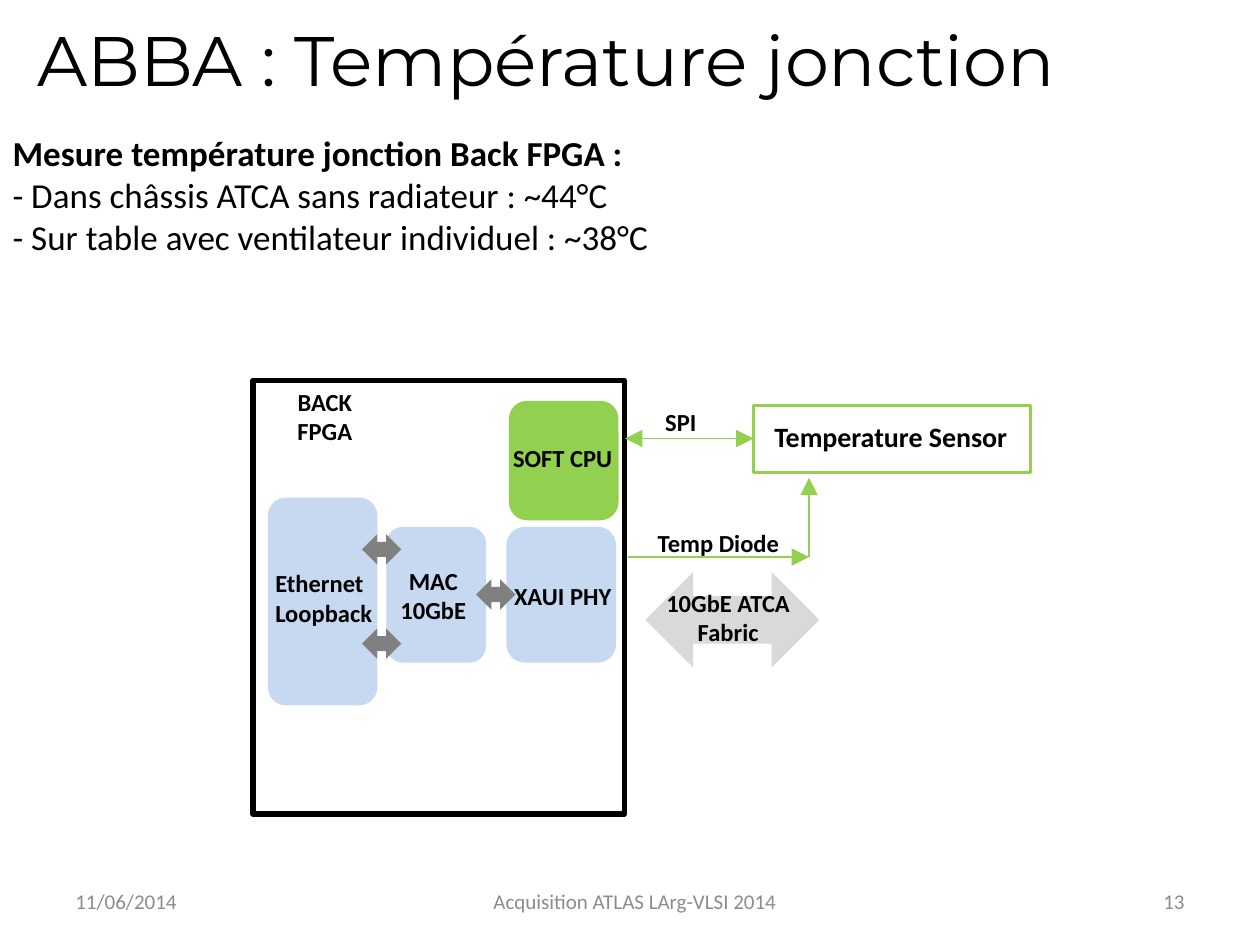
from lxml import etree
from pptx import Presentation
from pptx.dml.color import RGBColor
from pptx.enum.shapes import MSO_CONNECTOR, MSO_SHAPE
from pptx.enum.text import MSO_ANCHOR, MSO_AUTO_SIZE, PP_ALIGN
from pptx.oxml.ns import qn
from pptx.util import Cm, Pt

RECTANGLE = MSO_SHAPE.RECTANGLE
ROUNDED = MSO_SHAPE.ROUNDED_RECTANGLE
DOUBLE_ARROW = MSO_SHAPE.LEFT_RIGHT_ARROW
STRAIGHT = MSO_CONNECTOR.STRAIGHT
LEFT, CENTER, RIGHT = PP_ALIGN.LEFT, PP_ALIGN.CENTER, PP_ALIGN.RIGHT
TOP, MIDDLE = MSO_ANCHOR.TOP, MSO_ANCHOR.MIDDLE
NO_AUTO_SIZE = MSO_AUTO_SIZE.NONE

BLACK, GREY, DARK_GREY, LIGHT_GREY = "000000", "8C8C8C", "808080", "D9D9D9"
BLUE, GREEN = "C6D9F1", "92D050"
LABEL_FONT = {"name": "Calibri", "size": Pt(14), "bold": True}
FOOTER_FONT = {"name": "Calibri", "size": Pt(12), "bold": False}


def color(value):
    return RGBColor.from_string(value)


def place(shape, left, top, width, height):
    values = {"left": left, "top": top, "width": width, "height": height}
    for name, value in values.items():
        setattr(shape, name, Cm(value))


def write_lines(shape, lines, font, text_color=BLACK, align=LEFT, anchor=TOP, wrap=True):
    """Write one paragraph per line, all in the same format."""
    frame = shape.text_frame
    frame.auto_size = NO_AUTO_SIZE
    frame.word_wrap = wrap
    frame.vertical_anchor = anchor
    frame.text = "\n".join(lines)
    for paragraph in frame.paragraphs:
        paragraph.alignment = align
        paragraph.space_before = Pt(0)
        for run in paragraph.runs:
            for name, value in font.items():
                setattr(run.font, name, value)
            run.font.color.rgb = color(text_color)


def add_label(slide, box, lines, font=LABEL_FONT, **options):
    left, top, width, height = box
    text_box = slide.shapes.add_textbox(Cm(left), Cm(top), Cm(width), Cm(height))
    write_lines(text_box, lines, font, **options)


def add_block(slide, kind, box, fill=None, line=None, line_width=1):
    shape = slide.shapes.add_shape(kind, *(Cm(value) for value in box))
    shape.shadow.inherit = False
    if fill:
        shape.fill.solid()
        shape.fill.fore_color.rgb = color(fill)
    else:
        shape.fill.background()
    if line:
        shape.line.color.rgb = color(line)
        shape.line.width = Pt(line_width)
    else:
        shape.line.fill.background()


def add_arrow(slide, start, end, ends=("tailEnd",)):
    connector = slide.shapes.add_connector(STRAIGHT, *(Cm(value) for value in start + end))
    connector.line.color.rgb = color(GREEN)
    connector.line.width = Pt(0.75)
    line = connector.line._get_or_add_ln()
    for name in ends:
        etree.SubElement(line, qn("a:" + name), type="triangle", w="lg", len="lg")
    etree.SubElement(connector._element.spPr, qn("a:effectLst"))


def shifted(origin, box):
    """Move a box or a point from region to slide coordinates."""
    return (origin[0] + box[0], origin[1] + box[1]) + tuple(box[2:])


def fill_header(slide):
    title = slide.shapes.title
    place(title, 0.5, 0.38, 24.3, 1.6)
    write_lines(title, ["ABBA : Température jonction"],
                {"name": "Montserrat", "size": Pt(40)}, anchor=MIDDLE)

    body = slide.placeholders[1]
    place(body, 0, 2.53, 25.4, 2.82)
    write_lines(body, ["Mesure température jonction Back FPGA :",
                       "- Dans châssis ATCA sans radiateur : ~44°C",
                       "- Sur table avec ventilateur individuel : ~38°C"],
                {"name": "Calibri", "size": Pt(20), "bold": False})
    for paragraph in body.text_frame.paragraphs:
        properties = paragraph._p.get_or_add_pPr()
        properties.set("marL", "0")
        properties.set("indent", "0")
        etree.SubElement(properties, qn("a:buNone"))
    body.text_frame.paragraphs[0].runs[0].font.bold = True


def draw_fpga(slide, box):
    origin = box[:2]
    add_block(slide, RECTANGLE, box, line=BLACK, line_width=3)

    # Function blocks
    blocks = [((0.3, 2.36, 2.21, 4.19), BLUE), ((2.69, 2.95, 2.01, 2.74), BLUE),
              ((5.11, 2.95, 2.21, 2.74), BLUE), ((5.16, 0.41, 2.21, 2.41), GREEN)]
    for block, fill in blocks:
        add_block(slide, ROUNDED, shifted(origin, block), fill)

    # Links between blocks
    for left, top in [(2.2, 3.1), (2.2, 5), (4.5, 4.01)]:
        add_block(slide, DOUBLE_ARROW, shifted(origin, (left, top, 0.79, 0.61)), DARK_GREY)

    # Names of the blocks
    labels = [((0, 0, 2.9, 1.45), ["BACK", "FPGA"], CENTER, True),
              ((0.2, 3.66, 2.49, 1.45), ["Ethernet Loopback"], LEFT, True),
              ((2.39, 3.61, 2.49, 1.45), ["MAC 10GbE"], CENTER, True),
              ((5, 1.14, 2.49, 0.86), ["SOFT CPU"], CENTER, False),
              ((5, 3.91, 2.49, 0.86), ["XAUI PHY"], CENTER, False)]
    for label, lines, align, wrap in labels:
        add_label(slide, shifted(origin, label), lines, align=align, wrap=wrap)


def draw_connections(slide, origin):
    # Fabric link
    add_block(slide, DOUBLE_ARROW, shifted(origin, (0.41, 3.86, 3.51, 1.93)), LIGHT_GREY)
    add_label(slide, shifted(origin, (0.48, 4.06, 3.2, 1.45)),
              ["10GbE ATCA", "Fabric"], align=CENTER)

    # Temperature sensor
    add_block(slide, RECTANGLE, shifted(origin, (2.59, 0.51, 5.59, 1.35)),
              line=GREEN, line_width=2)
    add_label(slide, shifted(origin, (2.21, 0.66, 6.3, 0.94)), ["Temperature Sensor"],
              {**LABEL_FONT, "size": Pt(16)}, align=CENTER)

    # Sensor lines
    corner = shifted(origin, (3.71, 3.56))
    add_arrow(slide, shifted(origin, (0, 1.17)), shifted(origin, (2.59, 1.17)),
              ("headEnd", "tailEnd"))
    add_arrow(slide, shifted(origin, (0.05, 3.56)), corner)
    add_arrow(slide, corner, shifted(origin, (3.71, 1.96)))
    add_label(slide, shifted(origin, (0.56, 0.41, 1.4, 0.86)), ["SPI"], wrap=False)
    add_label(slide, shifted(origin, (0.41, 2.84, 3, 0.86)), ["Temp Diode"], wrap=False)


def draw_footer(slide, top, height):
    parts = [(1.27, 5.92, "11/06/2014", LEFT),
             (7.8, 10, "Acquisition ATLAS LArg-VLSI 2014", CENTER),
             (18.21, 5.92, "13", RIGHT)]
    for left, width, text, align in parts:
        add_label(slide, (left, top, width, height), [text], FOOTER_FONT,
                  text_color=GREY, align=align, anchor=MIDDLE)


def main():
    presentation = Presentation()
    presentation.slide_width, presentation.slide_height = Cm(25.4), Cm(19.05)
    slide = presentation.slides.add_slide(presentation.slide_layouts[1])
    fill_header(slide)
    draw_fpga(slide, (5.1, 7.67, 7.49, 8.74))
    draw_connections(slide, (12.6, 7.67))
    draw_footer(slide, 17.65, 1.02)
    presentation.save("out.pptx")


if __name__ == "__main__":
    main()
